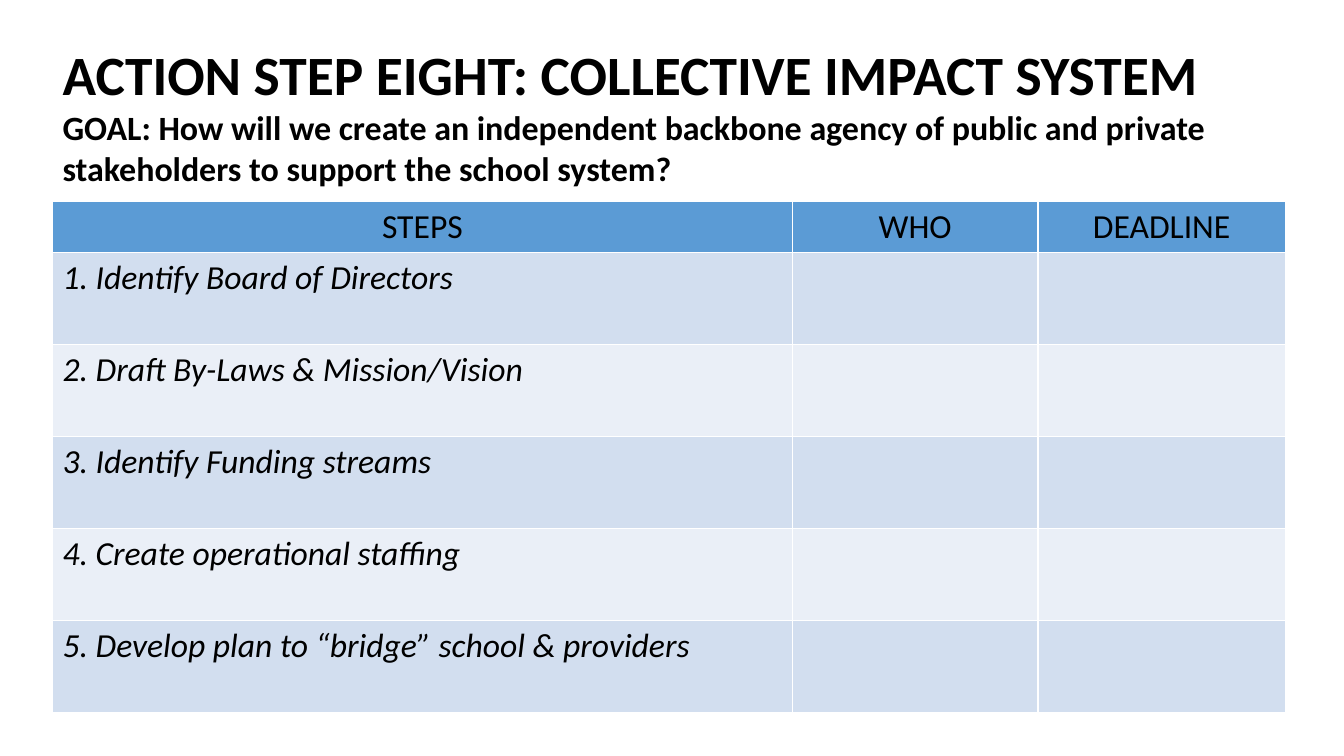
"""Build the action step slide with its goal and planning table."""
from dataclasses import dataclass

from pptx import Presentation
from pptx.dml.color import RGBColor as Color
from pptx.enum.text import MSO_ANCHOR as Anchor, MSO_AUTO_SIZE as AutoSize, PP_ALIGN as Align
from pptx.util import Pt


@dataclass(frozen=True)
class Theme:
    font: str = "Calibri"
    text: Color = Color.from_string("000000")
    header: Color = Color.from_string("5B9BD5")
    bands: tuple = (Color.from_string("D2DEEF"), Color.from_string("EAEFF7"))
    title_size: float = 39.6
    goal_size: float = 24.3
    table_size: float = 24


class SlideBuilder:
    def __init__(self, slide, theme):
        self.slide = slide
        self.theme = theme

    def style(self, paragraph, size, bold=False, italic=False, align=Align.LEFT):
        paragraph.alignment = align
        font = paragraph.font
        font.name = self.theme.font
        font.size = Pt(size)
        font.bold = bold
        font.italic = italic
        font.color.rgb = self.theme.text

    def title(self, heading, goal, left, top, width, height):
        shape = self.slide.shapes.title
        shape.left, shape.top = Pt(left), Pt(top)
        shape.width, shape.height = Pt(width), Pt(height)
        frame = shape.text_frame
        frame.word_wrap = True
        frame.auto_size = AutoSize.NONE
        frame.vertical_anchor = Anchor.MIDDLE
        paragraph = frame.paragraphs[0]
        self.style(paragraph, self.theme.title_size, bold=True)
        paragraph.add_run().text = heading
        paragraph.add_line_break()
        goal_run = paragraph.add_run()
        goal_run.text = goal
        goal_run.font.size = Pt(self.theme.goal_size)

    def table(self, headers, steps, left, top, widths, header_height, step_height):
        rows = [headers] + [[step] + [""] * (len(headers) - 1) for step in steps]
        heights = [header_height] + [step_height] * len(steps)
        table = self.slide.shapes.add_table(
            len(rows), len(headers), Pt(left), Pt(top), Pt(sum(widths)), Pt(sum(heights))
        ).table
        for column, width in zip(table.columns, widths):
            column.width = Pt(width)
        for index, (texts, height) in enumerate(zip(rows, heights)):
            table.rows[index].height = Pt(height)
            is_header = index == 0
            fill = self.theme.header if is_header else self.theme.bands[(index - 1) % 2]
            for column_index, text in enumerate(texts):
                cell = table.cell(index, column_index)
                cell.fill.solid()
                cell.fill.fore_color.rgb = fill
                cell.text = text
                self.style(
                    cell.text_frame.paragraphs[0],
                    self.theme.table_size,
                    italic=not is_header,
                    align=Align.CENTER if is_header else Align.LEFT,
                )


def main():
    presentation = Presentation()
    presentation.slide_width, presentation.slide_height = Pt(960), Pt(540)
    title_only = presentation.slide_layouts[5]
    builder = SlideBuilder(presentation.slides.add_slide(title_only), Theme())
    builder.title(
        "ACTION STEP EIGHT: COLLECTIVE IMPACT SYSTEM",
        "GOAL: How will we create an independent backbone agency of public and private "
        "stakeholders to support the school system?",
        left=37.5, top=29, width=880.5, height=104.5,
    )
    builder.table(
        ["STEPS", "WHO", "DEADLINE"],
        [
            "1. Identify Board of Directors",
            "2. Draft By-Laws & Mission/Vision",
            "3. Identify Funding streams",
            "4. Create operational staffing",
            "5. Develop plan to “bridge” school & providers",
        ],
        left=37.5, top=144, widths=[528.5, 175.5, 176.5],
        header_height=36, step_height=65.75,
    )
    presentation.save("out.pptx")


if __name__ == "__main__":
    main()
